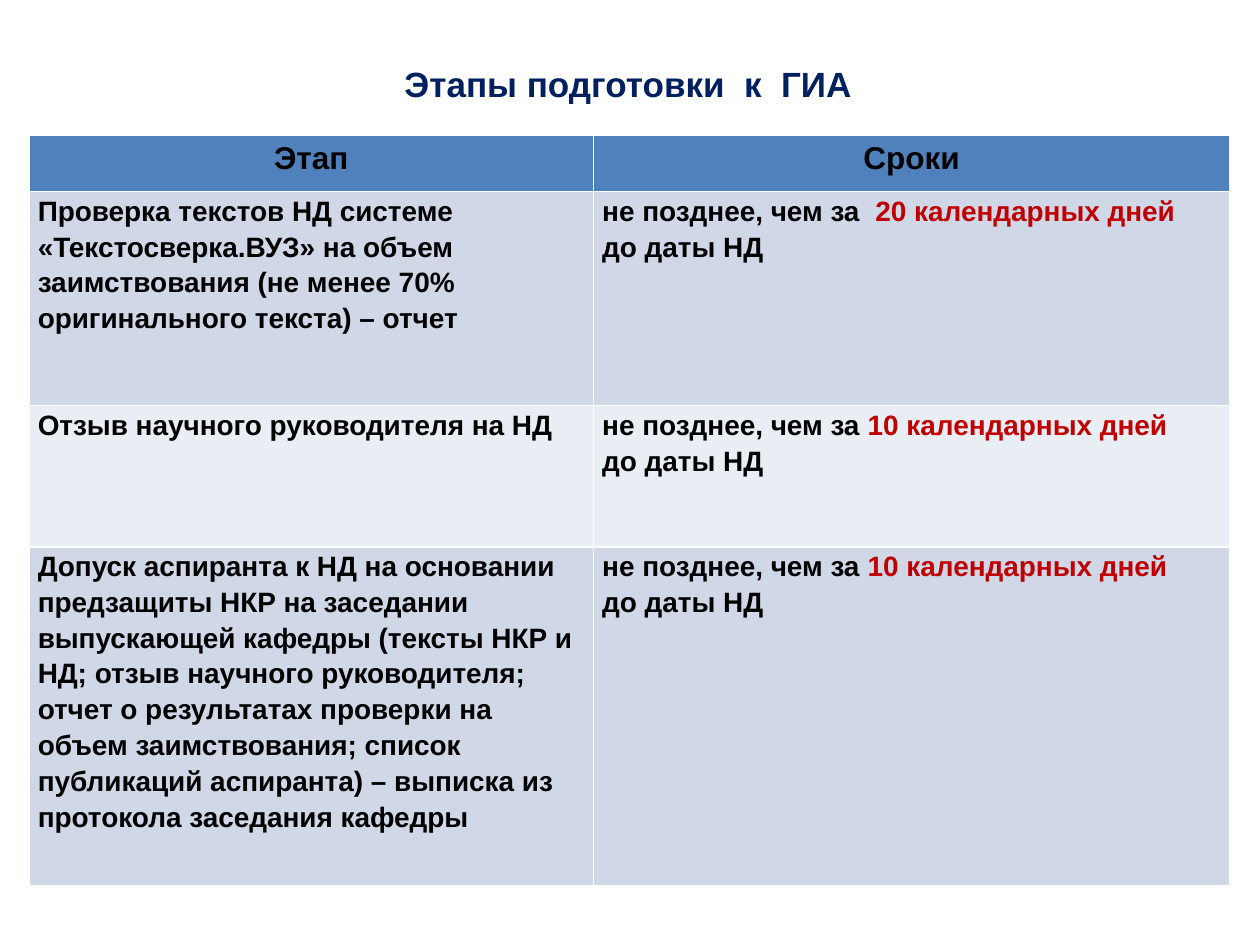
from pptx import Presentation
from pptx.dml.color import RGBColor
from pptx.enum.text import MSO_ANCHOR, PP_ALIGN
from pptx.util import Inches, Pt

NAVY = RGBColor(0x00, 0x20, 0x60)
BLACK = RGBColor(0x00, 0x00, 0x00)
RED = RGBColor(0xC0, 0x00, 0x00)
BLUE = RGBColor(0x4F, 0x81, 0xBD)
BANDS = [RGBColor(0xD0, 0xD8, 0xE8), RGBColor(0xE9, 0xED, 0xF4)]

HEADS = ["Этап", "Сроки"]
STAGES = [
    ("Проверка текстов НД системе «Текстосверка.ВУЗ» на объем заимствования "
     "(не менее 70% оригинального текста) – отчет",
     "не позднее, чем за  ", "20 календарных дней", PP_ALIGN.LEFT),
    ("Отзыв научного руководителя на НД",
     "не позднее, чем за ", "10 календарных дней ", PP_ALIGN.JUSTIFY),
    ("Допуск аспиранта к НД на основании предзащиты НКР на заседании "
     "выпускающей кафедры (тексты НКР и НД; отзыв научного руководителя; "
     "отчет о результатах проверки на объем заимствования; список публикаций "
     "аспиранта) – выписка из протокола заседания кафедры",
     "не позднее, чем за ", "10 календарных дней ", PP_ALIGN.JUSTIFY),
]
WIDTHS = [4.48, 5.05]
HEIGHTS = [0.45, 1.7, 1.12, 2.69]


def style(para, size, color, align):
    """Set the font and alignment of a paragraph."""
    font = para.font
    font.name, font.size, font.bold = "Arial", Pt(size), True
    font.color.rgb = color
    para.alignment = align


def paint(cell, color):
    """Fill a cell with a solid colour."""
    cell.fill.solid()
    cell.fill.fore_color.rgb = color


def write(cell, lines, align):
    """Fill a body cell with paragraphs given as lists of (text, color) runs."""
    cell.margin_left = cell.margin_right = Inches(0.07)
    cell.margin_top = cell.margin_bottom = 0
    frame = cell.text_frame
    for i, line in enumerate(lines):
        para = frame.add_paragraph() if i else frame.paragraphs[0]
        style(para, 16, BLACK, align)
        para.line_spacing = 1.15
        for text, color in line:
            run = para.add_run()
            run.text = text
            run.font.color.rgb = color


def add_title(slide, left, top, width, height):
    """Place the slide title in the given box."""
    title = slide.shapes.title
    title.left, title.top = Inches(left), Inches(top)
    title.width, title.height = Inches(width), Inches(height)
    frame = title.text_frame
    frame.text = "Этапы подготовки  к  ГИА"
    frame.vertical_anchor = MSO_ANCHOR.MIDDLE
    style(frame.paragraphs[0], 20, NAVY, PP_ALIGN.CENTER)


def add_stages(slide, left, top, width, height):
    """Place the table of stages and deadlines in the given box."""
    table = slide.shapes.add_table(
        len(STAGES) + 1, len(HEADS),
        Inches(left), Inches(top), Inches(width), Inches(height)).table
    for col, share in zip(table.columns, WIDTHS):
        col.width = Inches(width * share / sum(WIDTHS))
    for row, share in zip(table.rows, HEIGHTS):
        row.height = Inches(height * share / sum(HEIGHTS))
    for i, head in enumerate(HEADS):
        cell = table.cell(0, i)
        cell.text = head
        style(cell.text_frame.paragraphs[0], 18, BLACK, PP_ALIGN.CENTER)
        paint(cell, BLUE)
    for i, (stage, lead, days, align) in enumerate(STAGES):
        task, term = table.cell(i + 1, 0), table.cell(i + 1, 1)
        write(task, [[(stage, BLACK)]], PP_ALIGN.LEFT)
        write(term, [[(lead, BLACK), (days, RED)],
                     [("до даты НД", BLACK)]], align)
        for cell in (task, term):
            paint(cell, BANDS[i % 2])


def main():
    """Build and save the slide."""
    deck = Presentation()
    deck.slide_width, deck.slide_height = Inches(10), Inches(7.5)
    slide = deck.slides.add_slide(deck.slide_layouts[5])
    add_title(slide, 0.47, 0.3, 9.03, 0.72)
    add_stages(slide, 0.23, 1.07, 9.53, 5.96)
    deck.save("out.pptx")


if __name__ == "__main__":
    main()
